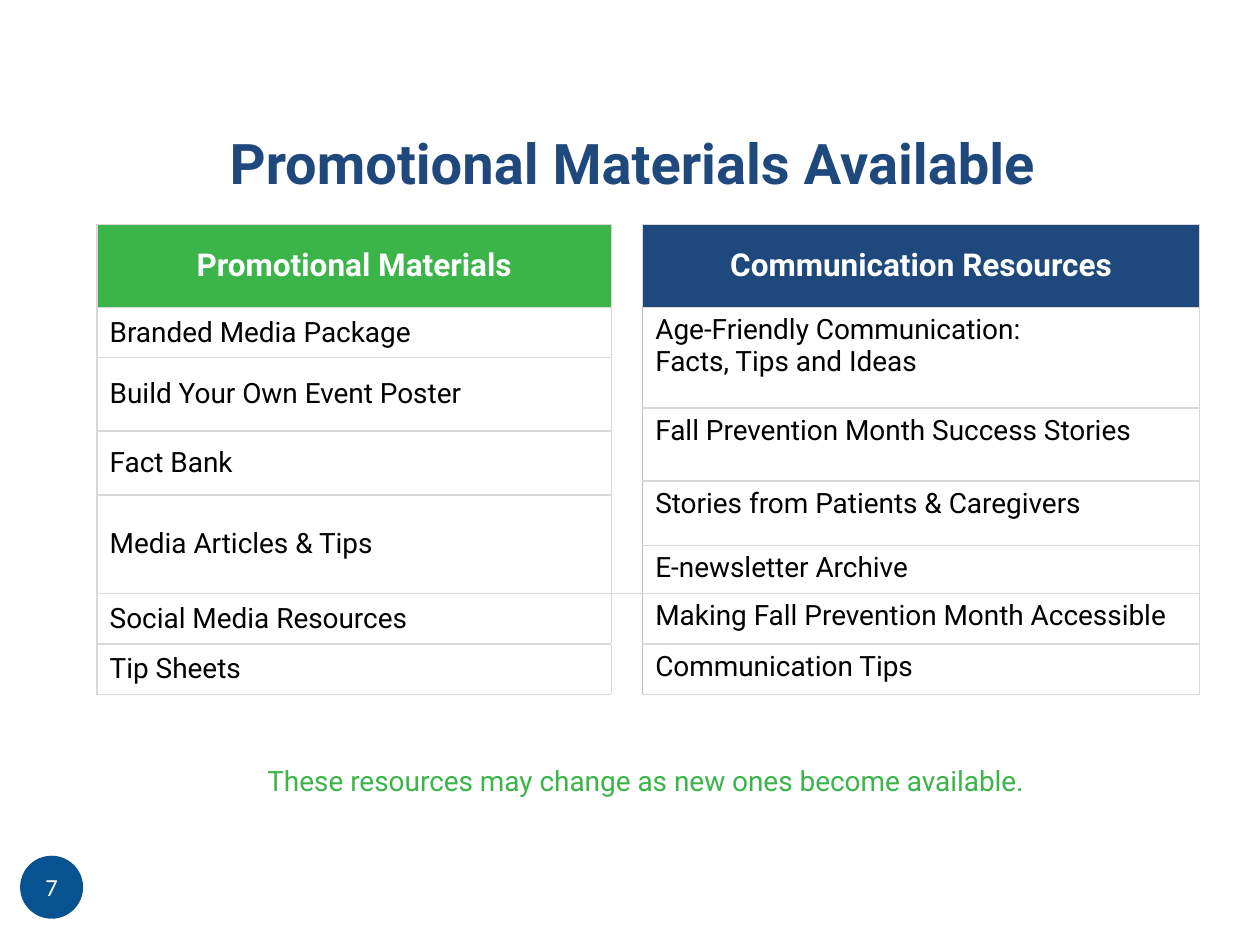
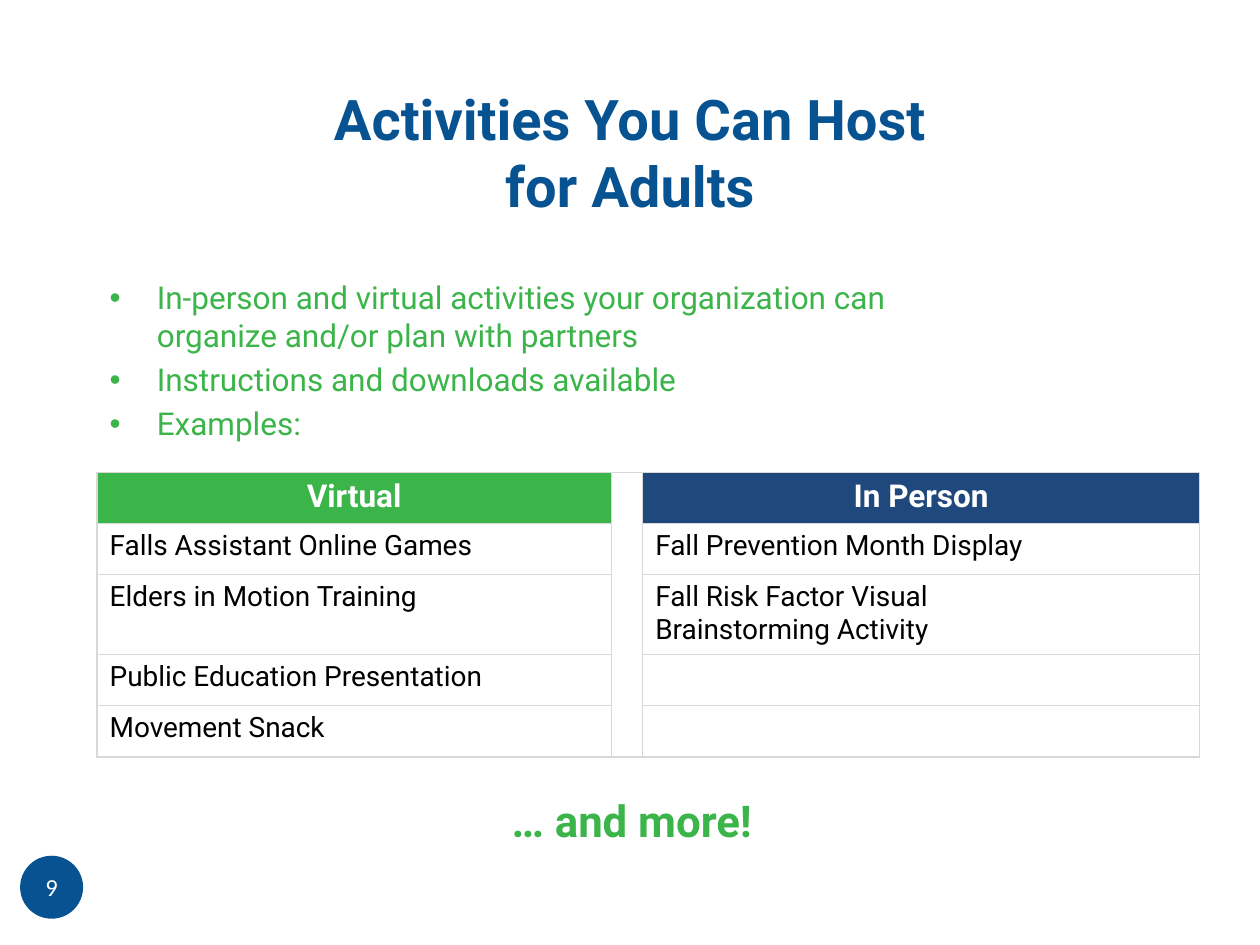
from lxml import etree
from pptx import Presentation
from pptx.dml import color as c
from pptx.enum import shapes, text
from pptx.oxml import ns
from pptx.util import Pt

GREEN = c.RGBColor(0x3B, 0xB4, 0x4A)
NAVY = c.RGBColor(0x1F, 0x49, 0x7D)
BLUE = c.RGBColor(0x07, 0x52, 0x90)
WHITE = c.RGBColor(0xFF, 0xFF, 0xFF)
BLACK = c.RGBColor(0, 0, 0)
LIGHT_GREY = c.RGBColor(0xD8, 0xD8, 0xD8)
GREY = c.RGBColor(0xBF, 0xBF, 0xBF)

FONT = "Roboto"
TABLE_LEFT = 55.5
COLUMN_WIDTHS = (293.8, 18, 318.2)
MIDDLE = text.MSO_ANCHOR.MIDDLE
TOP = text.MSO_ANCHOR.TOP
BOTTOM = text.MSO_ANCHOR.BOTTOM
CENTER = text.PP_ALIGN.CENTER


def format_frame(frame, size, color, bold=False, align=None, font=FONT):
    for para in frame.paragraphs:
        para.alignment = align
        for span in para.runs:
            span.font.name = font
            span.font.size = Pt(size)
            span.font.bold = bold
            span.font.color.rgb = color


def add_text(page, words, place, size, color, bold=False, anchor=TOP, align=CENTER):
    box = page.shapes.add_textbox(*map(Pt, place))
    frame = box.text_frame
    frame.word_wrap = True
    frame.vertical_anchor = anchor
    frame.text = words
    format_frame(frame, size, color, bold, align)
    return frame


def add_title(page, words, place, color, anchor):
    add_text(page, words, place, 32, color, True, anchor)


def add_bullets(page, lines, place):
    frame = add_text(page, "\n".join(lines), place, 18, GREEN, align=None)
    for index, para in enumerate(frame.paragraphs):
        properties = para._p.get_or_add_pPr()
        properties.set("marL", str(Pt(27)))
        properties.set("indent", str(Pt(-27)))
        if index:
            para.space_before = Pt(3.6)
        etree.SubElement(properties, ns.qn("a:buFont"), typeface="Arial")
        etree.SubElement(properties, ns.qn("a:buChar"), char="•")


def add_page_number(page, number):
    circle = page.shapes.add_shape(shapes.MSO_SHAPE.OVAL, Pt(11.5), Pt(489), Pt(36), Pt(36))
    circle.shadow.inherit = False
    circle.fill.solid()
    circle.fill.fore_color.rgb = BLUE
    circle.line.fill.background()
    frame = circle.text_frame
    frame.margin_left = frame.margin_right = frame.margin_top = frame.margin_bottom = 0
    frame.vertical_anchor = MIDDLE
    frame.text = str(number)
    format_frame(frame, 14, WHITE, align=CENTER, font="Calibri")


def set_borders(cell, edges):
    properties = cell._tc.get_or_add_tcPr()
    for side in "LRTB":
        line = etree.SubElement(properties, ns.qn(f"a:ln{side}"), w=str(Pt(1)))
        fill = etree.SubElement(line, ns.qn("a:solidFill"))
        etree.SubElement(fill, ns.qn("a:srgbClr"), val=str(edges.get(side, LIGHT_GREY)))


def style_cell(cell, fill, edges):
    set_borders(cell, edges)
    cell.fill.solid()
    cell.fill.fore_color.rgb = fill


def fill_column(table, column, entries, header_fill=None, anchor=TOP):
    row = 0
    for words, rows, edges in entries:
        is_header = header_fill is not None and row == 0
        for covered in range(row, row + rows):
            style_cell(table.cell(covered, column), header_fill if is_header else WHITE, edges)
        cell = table.cell(row, column)
        if rows > 1:
            cell.merge(table.cell(row + rows - 1, column))
        if words:
            cell.text_frame.text = words
            cell.vertical_anchor = anchor
            if is_header:
                format_frame(cell.text_frame, 18, WHITE, True, CENTER)
            else:
                format_frame(cell.text_frame, 16, BLACK)
        else:
            cell.margin_top = cell.margin_bottom = 0
        row += rows


def add_table(page, top, heights):
    frame = page.shapes.add_table(len(heights), len(COLUMN_WIDTHS), Pt(TABLE_LEFT), Pt(top),
                                  Pt(sum(COLUMN_WIDTHS)), Pt(sum(heights)))
    table = frame.table
    table.first_row = table.horz_banding = False
    for column, width in zip(table.columns, COLUMN_WIDTHS):
        column.width = Pt(width)
    for row, height in zip(table.rows, heights):
        row.height = Pt(height)
    return table


def build_materials(page):
    add_page_number(page, 7)
    add_title(page, "Promotional Materials Available", (55.5, 25.2, 612, 90), NAVY, BOTTOM)
    table = add_table(page, 128.4, (47.2, 28.8, 28.8, 13, 28.8, 8, 28.8, 27.4, 28.8, 28.8))
    materials = [("Promotional Materials", 1), ("Branded Media Package", 1),
                 ("Build Your Own Event Poster", 2), ("Fact Bank", 2),
                 ("Media Articles & Tips", 2), ("Social Media Resources", 1),
                 ("Tip Sheets", 1)]
    resources = [("Age-Friendly Communication:\nFacts, Tips and Ideas", 2),
                 ("Fall Prevention Month Success Stories", 2),
                 ("Stories from Patients & Caregivers", 2), ("E-newsletter Archive", 1),
                 ("Making Fall Prevention Month Accessible", 1), ("Communication Tips", 1)]
    fill_column(table, 0, [(*entry, {}) for entry in materials], GREEN, MIDDLE)
    fill_column(table, 1, [("", 8, {"T": WHITE}), ("", 1, {"R": GREY, "B": WHITE}),
                           ("", 1, {"R": GREY, "T": WHITE, "B": WHITE})])
    fill_column(table, 2, [("Communication Resources", 1, {})]
                + [(*entry, {"L": GREY}) for entry in resources], NAVY)
    table.cell(0, 2).vertical_anchor = MIDDLE
    add_text(page, "These resources may change as new ones become available.",
             (54, 432.7, 630, 26.6), 16, GREEN)


def build_activities(page):
    add_page_number(page, 9)
    add_title(page, "Activities You Can Host for Adults", (175, 41.8, 370, 90), BLUE, MIDDLE)
    add_bullets(page, ["In-person and virtual activities your organization can "
                       "organize and/or plan with partners",
                       "Instructions and downloads available", "Examples:"],
                (55.5, 155.5, 473.8, 105.8))
    table = add_table(page, 270, (29.2, 29.2, 45.7, 29.2, 29.2))
    virtual = ["Virtual", "Falls Assistant Online Games", "Elders in Motion Training",
               "Public Education Presentation", "Movement Snack"]
    in_person = ["In Person", "Fall Prevention Month Display",
                 "Fall Risk Factor Visual\nBrainstorming Activity", "", ""]
    fill_column(table, 0, [(words, 1, {}) for words in virtual], GREEN)
    fill_column(table, 1, [("", 5, {})])
    fill_column(table, 2, [(words, 1, {}) for words in in_person], NAVY)
    add_text(page, "… and more!", (264.2, 450, 193.7, 37.4), 25, GREEN, True)


def main():
    deck = Presentation()
    deck.slide_width, deck.slide_height = Pt(720), Pt(540)
    for build in (build_materials, build_activities):
        build(deck.slides.add_slide(deck.slide_layouts[6]))
    deck.save("out.pptx")


if __name__ == "__main__":
    main()
